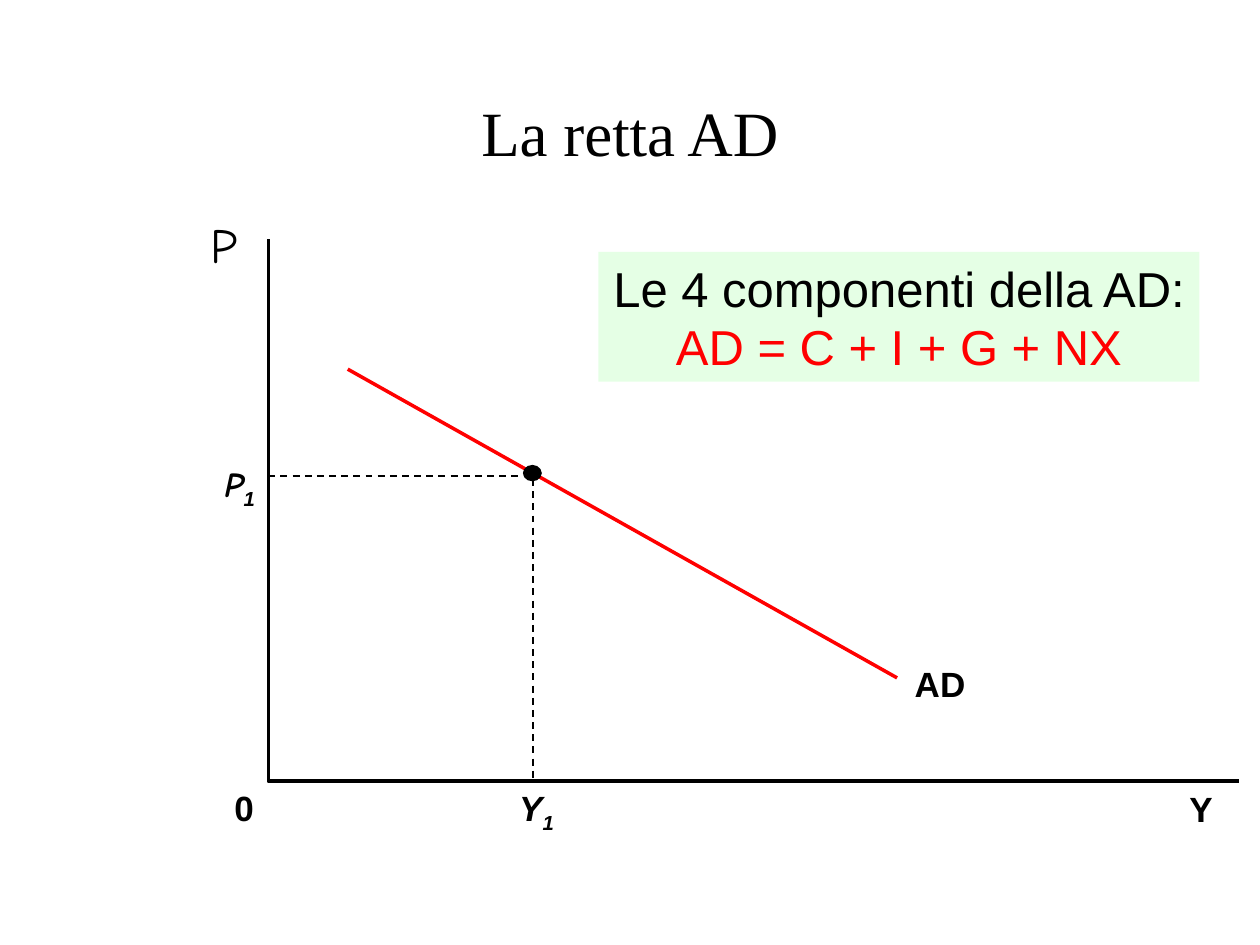
import lxml.etree
import pptx
import pptx.dml.color
import pptx.enum.dml
import pptx.enum.shapes
import pptx.enum.text
import pptx.oxml.ns
import pptx.util

Inches = pptx.util.Inches
Pt = pptx.util.Pt
CENTER = pptx.enum.text.PP_ALIGN.CENTER
FIT_TEXT = pptx.enum.text.MSO_AUTO_SIZE.SHAPE_TO_FIT_TEXT
BLACK, RED, GREEN = "000000", "FF0000", "CCFFCC"
AXIS_X, AXIS_Y = 2.13, 6.2
POINT_X, POINT_Y = 4.23, 3.78


def rgb(color):
    """Return the colour for a hex string."""
    return pptx.dml.color.RGBColor.from_string(color)


def add_xml(parent, tag, **attrs):
    """Append a drawing element to its parent."""
    element = lxml.etree.SubElement(parent, pptx.oxml.ns.qn(tag))
    for name, value in attrs.items():
        element.set(name, value)


def add_run(p, text, size=20, font="Arial", color=BLACK, baseline=None, **style):
    """Append a formatted run to a paragraph."""
    r = p.add_run()
    r.text = text
    for name, value in {"size": Pt(size), "name": font, **style}.items():
        setattr(r.font, name, value)
    r.font.color.rgb = rgb(color)
    if baseline:
        r.font._element.set("baseline", str(baseline))


def add_label(s, x, y, w, h, text, sub=None, font="Arial", **style):
    """Add a margin-free label with an optional subscript."""
    sp = s.shapes.add_textbox(Inches(x), Inches(y), Inches(w), Inches(h))
    tf = sp.text_frame
    layout = dict.fromkeys(
        ("margin_left", "margin_top", "margin_right", "margin_bottom"), 0)
    layout.update(word_wrap=False, auto_size=FIT_TEXT)
    for name, value in layout.items():
        setattr(tf, name, value)
    p = tf.paragraphs[0]
    add_run(p, text, font=font, **style)
    if sub:
        add_run(p, sub, baseline=-25000, **style)


def format_line(line, color, width, dash=None):
    """Set the colour, width and dash of a line."""
    line.color.rgb = rgb(color)
    line.width = Pt(width)
    if dash:
        line.dash_style = dash


def add_path(s, points, width, dash=None):
    """Draw an open black polyline through the points."""
    start, *rest = [(Inches(x), Inches(y)) for x, y in points]
    builder = s.shapes.build_freeform(*start)
    builder.add_line_segments(rest, close=False)
    sp = builder.convert_to_shape()
    sp.shadow.inherit = False
    sp.fill.background()
    format_line(sp.line, BLACK, width, dash)


def add_line(s, start, end, color, width):
    """Draw a straight line between two points."""
    line = s.shapes.add_connector(
        pptx.enum.shapes.MSO_CONNECTOR.STRAIGHT,
        *(Inches(v) for v in (*start, *end)))
    format_line(line.line, color, width)
    add_xml(line._element.spPr, "a:effectLst")


def add_filled(s, kind, x, y, w, h, color):
    """Add a borderless filled shape."""
    sp = s.shapes.add_shape(kind, Inches(x), Inches(y), Inches(w), Inches(h))
    sp.shadow.inherit = False
    sp.fill.solid()
    sp.fill.fore_color.rgb = rgb(color)
    sp.line.fill.background()
    return sp


def add_formula_box(s):
    """Add the translucent box with the components of demand."""
    sp = add_filled(s, pptx.enum.shapes.MSO_SHAPE.RECTANGLE,
                    4.75, 2, 4.77, 1.03, GREEN)
    fill = sp._element.spPr.find(pptx.oxml.ns.qn("a:solidFill"))
    add_xml(fill[0], "a:alpha", val="50000")
    tf = sp.text_frame
    tf.word_wrap = False
    lines = [("Le 4 componenti della AD:", BLACK), ("AD = C + I + G + NX", RED)]
    for i, (text, color) in enumerate(lines):
        p = tf.add_paragraph() if i else tf.paragraphs[0]
        p.alignment = CENTER
        add_run(p, text, size=28, color=color)


def add_title(s, text):
    """Place and format the title placeholder."""
    sp = s.shapes.title
    box = {"left": 0.75, "top": 0.42, "width": 8.5, "height": 1.25}
    for name, value in box.items():
        setattr(sp, name, Inches(value))
    sp.text_frame.vertical_anchor = pptx.enum.text.MSO_ANCHOR.MIDDLE
    p = sp.text_frame.paragraphs[0]
    p.alignment = CENTER
    add_run(p, text, size=36, font="Times New Roman")


def main():
    """Build the aggregate demand slide."""
    prs = pptx.Presentation()
    prs.slide_width, prs.slide_height = Inches(10), Inches(7.5)
    s = prs.slides.add_slide(prs.slide_layouts[5])
    add_title(s, "La retta AD")

    add_path(s, [(AXIS_X, 1.9), (AXIS_X, AXIS_Y), (9.83, AXIS_Y)], 2)
    add_path(s, [(AXIS_X, POINT_Y), (POINT_X, POINT_Y), (POINT_X, AXIS_Y)], 1,
             pptx.enum.dml.MSO_LINE.DASH)
    add_line(s, (2.76, 2.93), (7.12, 5.38), RED, 2)
    add_filled(s, pptx.enum.shapes.MSO_SHAPE.OVAL, 4.15, 3.69, 0.15, 0.13, BLACK)
    add_formula_box(s)

    add_label(s, 1.67, 1.7, 0.34, 0.47, "P", font="Comic Neue", size=28)
    add_label(s, 1.78, 3.67, 0.25, 0.33, "P", "1", font="Comic Neue",
              bold=True, italic=True)
    add_label(s, 4.12, 6.24, 0.29, 0.33, "Y", "1", bold=True, italic=True)
    add_label(s, 1.86, 6.24, 0.15, 0.33, "0", bold=True)
    add_label(s, 9.44, 6.25, 0.19, 0.33, "Y", bold=True)
    add_label(s, 7.26, 5.26, 0.42, 0.33, "AD", bold=True)
    prs.save("out.pptx")


if __name__ == "__main__":
    main()
